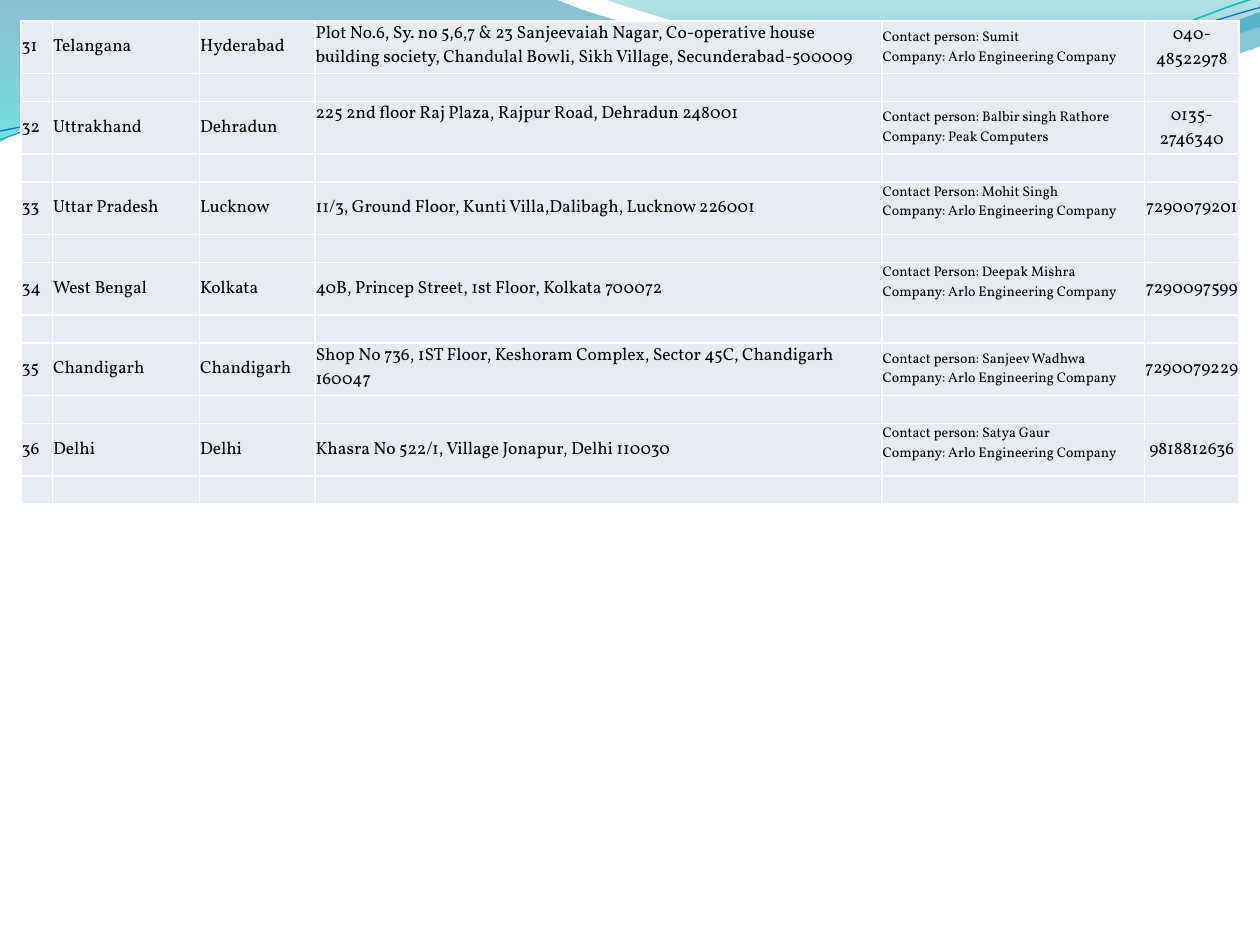
from dataclasses import dataclass
from typing import NamedTuple

from lxml.etree import SubElement
from pptx import Presentation
from pptx.dml.color import RGBColor
from pptx.enum.text import MSO_ANCHOR, PP_ALIGN
from pptx.oxml import parse_xml
from pptx.oxml.ns import nsdecls, qn
from pptx.util import Emu, Pt

PX = 2540  # 360 px to the inch
WAVE_UNIT = 3.6  # wave points are in hundredths of an inch
FONT = "Vollkorn"
BLACK = RGBColor(0x00, 0x00, 0x00)
CELL_FILL = RGBColor(0xE7, 0xEB, 0xF5)
BORDER = RGBColor(0xFF, 0xFF, 0xFF)
DEEP_BLUE = RGBColor(0x00, 0x74, 0xA1)
CYAN = RGBColor(0x00, 0xC6, 0xCF)
TEAL = RGBColor(0x00, 0xA1, 0xA9)
SEA_BLUE = RGBColor(0x00, 0x8B, 0xBF)
LINE_TEAL = RGBColor(0x0A, 0xB8, 0xBF)
LINE_BLUE = RGBColor(0x0F, 0x6F, 0xC6)

TABLE_LEFT, TABLE_TOP = 60, 60
COLUMN_WIDTHS = (90, 420, 330, 1620, 750, 270)
ENTRY_HEIGHT, GAP_HEIGHT = 150, 80
CELL_MARGIN = 2


class Stop(NamedTuple):
    color: RGBColor
    position: float
    opacity: int


@dataclass
class Wave:
    """Each segment holds one point (line) or three points (Bezier curve)."""
    start: tuple
    segments: list
    stops: tuple = ()
    line_color: RGBColor = None
    line_width: float = 0


@dataclass
class Office:
    number: str
    state: str
    city: str
    address: str
    contact: str
    company: str
    phone: str
    address_on_top: bool


WAVES = [
    Wave((-1, -1), [
        (440, -1), (476, 17, 664, 63, 758, 63), (853, 63, 958, 26, 1000, 9),
        (1001, 36), (983, 44, 870, 76, 746, 75), (622, 75, 382, 28, 257, 34),
        (129, 36, 46, 83, -1, 113)],
        stops=(Stop(DEEP_BLUE, 0, 45), Stop(CYAN, 1, 55))),
    Wave((479, -1), [
        (509, 11, 682, 62, 769, 65), (856, 69, 961, 32, 1000, 21), (1000, 0)],
        stops=(Stop(TEAL, 0, 30), Stop(SEA_BLUE, 0.8, 45))),
    Wave((0, 111), [
        (48, 93, 158, 57, 277, 52), (395, 47, 593, 89, 713, 80),
        (833, 71, 938, 15, 998, -2)],
        line_color=LINE_TEAL, line_width=0.85),
    Wave((0, 104), [
        (47, 96, 164, 61, 283, 56), (403, 51, 597, 84, 717, 75),
        (836, 67, 941, 21, 1000, 6)],
        line_color=LINE_BLUE, line_width=0.75),
]

ARLO = "Arlo Engineering Company"
OFFICES = [
    Office("31", "Telangana", "Hyderabad",
           "Plot No.6, Sy. no 5,6,7 & 23 Sanjeevaiah Nagar, Co-operative house building "
           "society, Chandulal Bowli, Sikh Village, Secunderabad-500009",
           "Contact person: Sumit", ARLO, "040-48522978", True),
    Office("32", "Uttrakhand", "Dehradun",
           "225 2nd floor Raj Plaza, Rajpur Road, Dehradun 248001",
           "Contact person: Balbir singh Rathore", "Peak Computers", "0135-2746340", True),
    Office("33", "Uttar Pradesh", "Lucknow",
           "11/3, Ground Floor, Kunti Villa,Dalibagh, Lucknow 226001",
           "Contact Person: Mohit Singh", ARLO, "7290079201", False),
    Office("34", "West Bengal", "Kolkata",
           "40B, Princep Street, 1st Floor, Kolkata 700072",
           "Contact Person: Deepak Mishra", ARLO, "7290097599", False),
    Office("35", "Chandigarh", "Chandigarh",
           "Shop No 736, 1ST Floor, Keshoram Complex, Sector 45C, Chandigarh 160047",
           "Contact person: Sanjeev Wadhwa", ARLO, "7290079229", True),
    Office("36", "Delhi", "Delhi",
           "Khasra No 522/1, Village Jonapur, Delhi 110030",
           "Contact person: Satya Gaur", ARLO, "9818812636", False),
]


def px(length: float) -> Emu:
    return Emu(round(length * PX))


def bend_segments(shape, segments: list) -> None:
    """Join the three lines of every curved segment into one Bezier curve."""
    lines = iter(list(shape._element.iter(qn("a:lnTo"))))
    for segment in segments:
        first = next(lines)
        if len(segment) == 2:
            continue
        curve = parse_xml(f'<a:cubicBezTo {nsdecls("a")}/>')
        first.addprevious(curve)
        for line in (first, next(lines), next(lines)):
            curve.append(line[0])
            line.getparent().remove(line)


def draw_wave(slide, wave: Wave) -> None:
    points = [pair for segment in wave.segments
              for pair in zip(segment[::2], segment[1::2])]
    builder = slide.shapes.build_freeform(*wave.start, scale=WAVE_UNIT * PX)
    builder.add_line_segments(points, close=bool(wave.stops))
    shape = builder.convert_to_shape()
    bend_segments(shape, wave.segments)
    shape.shadow.inherit = False
    if not wave.stops:
        shape.fill.background()
        shape.line.color.rgb = wave.line_color
        shape.line.width = Pt(wave.line_width)
        return
    shape.line.fill.background()
    shape.fill.gradient()
    shape.fill.gradient_angle = 270
    for gradient_stop, stop in zip(shape.fill.gradient_stops, wave.stops):
        gradient_stop.color.rgb = stop.color
        gradient_stop.position = stop.position
    for color, stop in zip(shape._element.spPr.iter(qn("a:srgbClr")), wave.stops):
        SubElement(color, qn("a:alpha")).set("val", str(stop.opacity * 1000))


def style_cell(cell) -> None:
    cell.fill.solid()
    cell.fill.fore_color.rgb = CELL_FILL
    cell.margin_left = cell.margin_right = cell.margin_top = px(CELL_MARGIN)
    cell.margin_bottom = 0
    properties = cell._tc.get_or_add_tcPr()
    for index, side in enumerate(("lnL", "lnR", "lnT", "lnB")):
        properties.insert(index, parse_xml(
            f'<a:{side} {nsdecls("a")} w="12700"><a:solidFill>'
            f'<a:srgbClr val="{BORDER}"/></a:solidFill></a:{side}>'))


def write_cell(cell, text: str, size: int = 10, top: bool = False,
               alignment: PP_ALIGN = PP_ALIGN.LEFT) -> None:
    cell.text_frame.text = text
    cell.vertical_anchor = MSO_ANCHOR.TOP if top else MSO_ANCHOR.MIDDLE
    for paragraph in cell.text_frame.paragraphs:
        paragraph.alignment = alignment
        for run in paragraph.runs:
            run.font.name = FONT
            run.font.size = Pt(size)
            run.font.color.rgb = BLACK


def draw_offices(slide, offices: list) -> None:
    heights = (ENTRY_HEIGHT, GAP_HEIGHT) * len(offices)
    table = slide.shapes.add_table(
        len(heights), len(COLUMN_WIDTHS), px(TABLE_LEFT), px(TABLE_TOP),
        px(sum(COLUMN_WIDTHS)), px(sum(heights))).table
    table.first_row = table.horz_banding = False
    for column, width in zip(table.columns, COLUMN_WIDTHS):
        column.width = px(width)
    for row, height in zip(table.rows, heights):
        row.height = px(height)
    for cell in table.iter_cells():
        style_cell(cell)

    for index, office in enumerate(offices):
        number, state, city, address, contact, phone = table.rows[2 * index].cells
        write_cell(number, office.number)
        write_cell(state, office.state)
        write_cell(city, office.city)
        write_cell(address, office.address, top=office.address_on_top)
        write_cell(contact, f"{office.contact}\nCompany: {office.company}", size=8,
                   top=not office.address_on_top)
        write_cell(phone, office.phone, alignment=PP_ALIGN.CENTER)
        # Small type keeps the empty rows low
        for cell in table.rows[2 * index + 1].cells:
            end = SubElement(cell.text_frame.paragraphs[0]._p, qn("a:endParaRPr"))
            end.set("sz", "1000")


def main() -> None:
    presentation = Presentation()
    presentation.slide_width, presentation.slide_height = px(3600), px(2700)
    slide = presentation.slides.add_slide(presentation.slide_layouts[6])
    # Waves along the top edge
    for wave in WAVES:
        draw_wave(slide, wave)
    # Table of offices
    draw_offices(slide, OFFICES)
    presentation.save("out.pptx")


if __name__ == "__main__":
    main()
